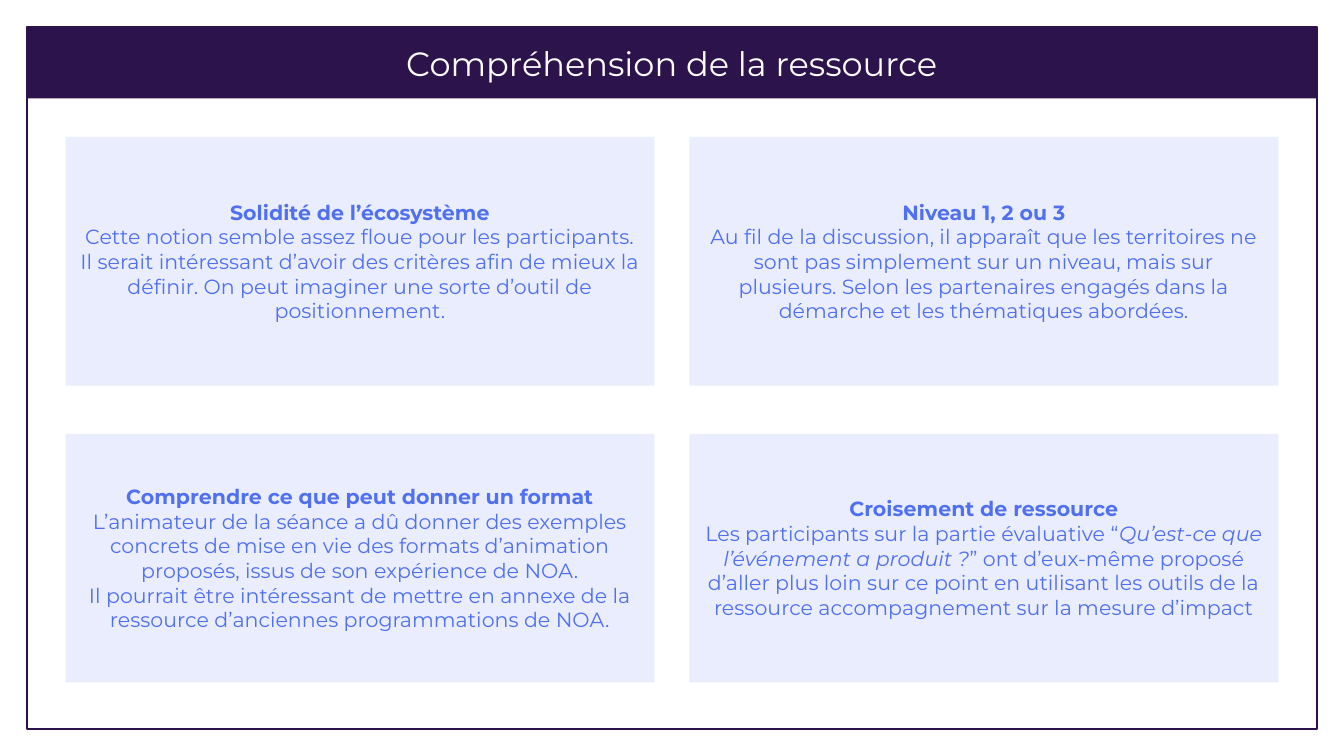
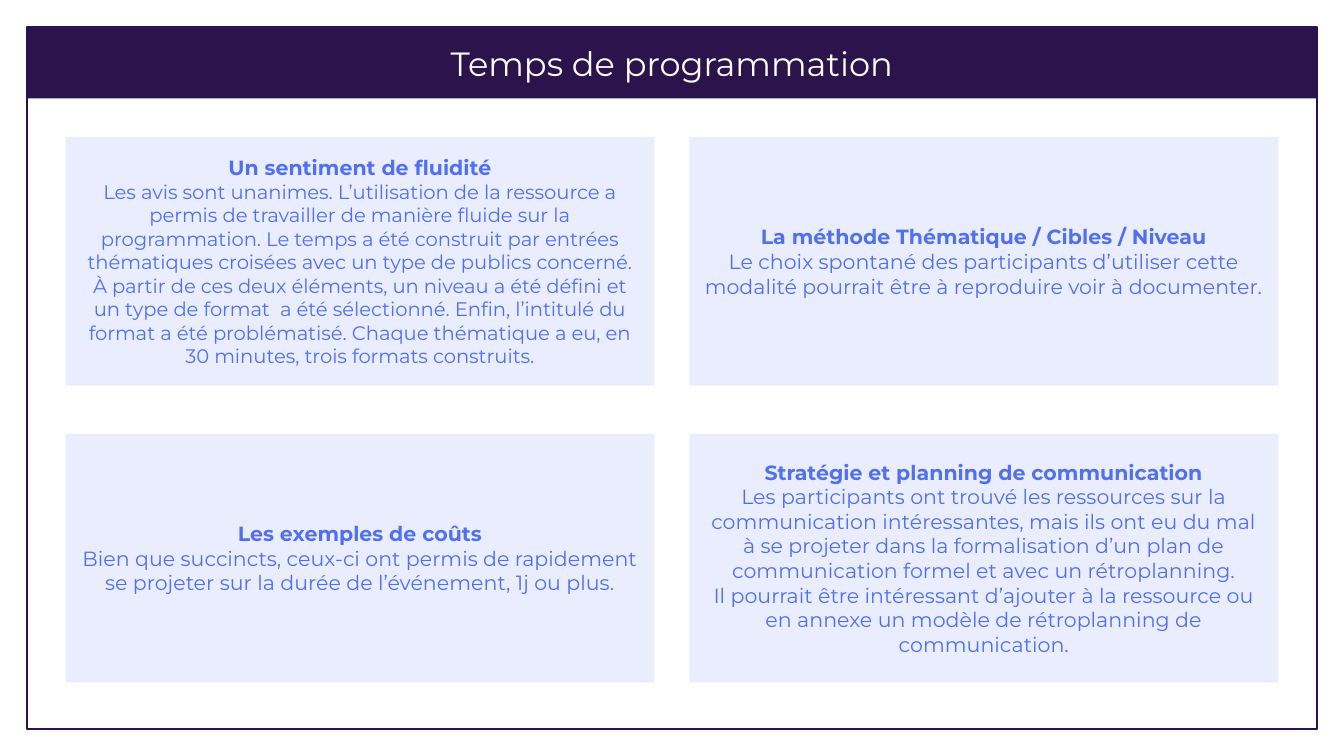
from copy import deepcopy
from dataclasses import dataclass

from pptx import Presentation
from pptx import util as u
from pptx.dml import color
from pptx.enum import shapes, text

# Content: title, then cards row by row; a card is a list of paragraphs,
# a paragraph a list of (style, words); "break" starts a new line.
BREAK = ("break", "")
PAGES = [
    ("Compréhension de la ressource", [
        [[("head", "Solidité de l’écosystème")],
         [("body", "Cette notion semble assez floue pour les participants.")],
         [("body", "Il serait intéressant d’avoir des critères afin de mieux la définir. "
                   "On peut imaginer une sorte d’outil de positionnement.")]],
        [[("head", "Niveau 1, 2 ou 3")],
         [("body", "Au fil de la discussion, il apparaît que les territoires ne sont pas "
                   "simplement sur un niveau, mais sur plusieurs. Selon les partenaires "
                   "engagés dans la démarche et les thématiques abordées.")]],
        [[("head", "Comprendre ce que peut donner un format"), BREAK,
          ("body", "L’animateur de la séance a dû donner des exemples concrets de mise en vie "
                   "des formats d’animation proposés, issus de son expérience de NOA.")],
         [("body", "Il pourrait être intéressant de mettre en annexe de la ressource "
                   "d’anciennes programmations de NOA.")]],
        [[("head", "Croisement de ressource"), BREAK,
          ("body", "Les participants sur la partie évaluative “"),
          ("quote", "Qu’est-ce que l’événement a produit ?"),
          ("body", "” ont d’eux-même proposé d’aller plus loin sur ce point en utilisant "
                   "les outils de la ressource accompagnement sur la mesure d’impact")]],
    ]),
    ("Temps de programmation", [
        [[("head", "Un sentiment de fluidité")],
         [("dense", "Les avis sont unanimes. L’utilisation de la ressource a permis de "
                    "travailler de manière fluide sur la programmation. Le temps a été "
                    "construit par entrées thématiques croisées avec un type de publics "
                    "concerné. À partir de ces deux éléments, un niveau a été défini et un "
                    "type de format  a été sélectionné. Enfin, l’intitulé du format a été "
                    "problématisé. Chaque thématique a eu, en 30 minutes, trois formats "
                    "construits.")]],
        [[("head", "La méthode Thématique / Cibles / Niveau")],
         [("body", "Le choix spontané des participants d’utiliser cette modalité pourrait "
                   "être à reproduire voir à documenter.")]],
        [[("head", "Les exemples de coûts")],
         [("body", "Bien que succincts, ceux-ci ont permis de rapidement se projeter sur la "
                   "durée de l’événement, 1j ou plus.")]],
        [[("head", "Stratégie et planning de communication"), BREAK,
          ("body", "Les participants ont trouvé les ressources sur la communication "
                   "intéressantes, mais ils ont eu du mal à se projeter dans la formalisation "
                   "d’un plan de communication formel et avec un rétroplanning.")],
         [("body", "Il pourrait être intéressant d’ajouter à la ressource ou en annexe un "
                   "modèle de rétroplanning de communication.")]],
    ]),
]


@dataclass(frozen=True)
class Theme:
    font: str = "Montserrat"
    dark: str = "2D134B"
    pale: str = "E9EDFD"
    blue: str = "5070F0"
    light: str = "FCFCFC"
    title: float = 18
    text: float = 11
    small: float = 10.5
    line: float = 1.5


T = Theme()
STYLES = {
    "title": (T.light, dict(size=u.Pt(T.title))),
    "head": (T.blue, dict(size=u.Pt(T.text), bold=True)),
    "body": (T.blue, dict(size=u.Pt(T.text), bold=False, italic=False)),
    "quote": (T.blue, dict(size=u.Pt(T.text), bold=False, italic=True)),
    "dense": (T.blue, dict(size=u.Pt(T.small), bold=False)),
}
PAD = u.Cm(0.25)
FRAME = dict(margin_left=PAD, margin_right=PAD, margin_top=PAD, margin_bottom=PAD,
             word_wrap=True, vertical_anchor=text.MSO_ANCHOR.MIDDLE)

# Layout in centimetres
WIDE, HIGH = 25.4, 14.29
EDGE, BAND = 0.51, 1.35
LEFT, TOP = 1.24, 2.59
CARD_W, CARD_H = 11.13, 4.7
GAP_X, GAP_Y = 0.66, 0.91
COLS = 2


def put(obj, vals):
    for name, val in vals.items():
        setattr(obj, name, val)


def box(slide, at, fill=None, line=None):
    shape = slide.shapes.add_shape(shapes.MSO_SHAPE.RECTANGLE, *map(u.Cm, at))
    shape.shadow.inherit = False
    if fill:
        shape.fill.solid()
        shape.fill.fore_color.rgb = color.RGBColor.from_string(fill)
    else:
        shape.fill.background()
    if line:
        shape.line.color.rgb = color.RGBColor.from_string(line)
        shape.line.width = u.Pt(T.line)
    else:
        shape.line.fill.background()
    return shape


def write(shape, paras):
    frame = shape.text_frame
    put(frame, FRAME)
    for i, parts in enumerate(paras):
        para = frame.add_paragraph() if i else frame.paragraphs[0]
        para.alignment = text.PP_ALIGN.CENTER
        for style, words in parts:
            if style == "break":
                # The break keeps the format of the run before it
                para.add_line_break()
                para._p[-1].append(deepcopy(run._r.rPr))
                continue
            run = para.add_run()
            run.text = words
            tint, vals = STYLES[style]
            put(run.font, dict(vals, name=T.font))
            run.font.color.rgb = color.RGBColor.from_string(tint)


def build(deck, title, cards):
    slide = deck.slides.add_slide(deck.slide_layouts[6])
    # Frame and title band
    width = WIDE - 2 * EDGE
    box(slide, (EDGE, EDGE, width, HIGH - 2 * EDGE), line=T.dark)
    write(box(slide, (EDGE, EDGE, width, BAND), T.dark), [[("title", title)]])
    # Grid of cards
    for i, paras in enumerate(cards):
        row, col = divmod(i, COLS)
        at = (LEFT + col * (CARD_W + GAP_X), TOP + row * (CARD_H + GAP_Y), CARD_W, CARD_H)
        write(box(slide, at, T.pale), paras)


def main():
    deck = Presentation()
    put(deck, dict(slide_width=u.Cm(WIDE), slide_height=u.Cm(HIGH)))
    for title, cards in PAGES:
        build(deck, title, cards)
    deck.save("out.pptx")


if __name__ == "__main__":
    main()
